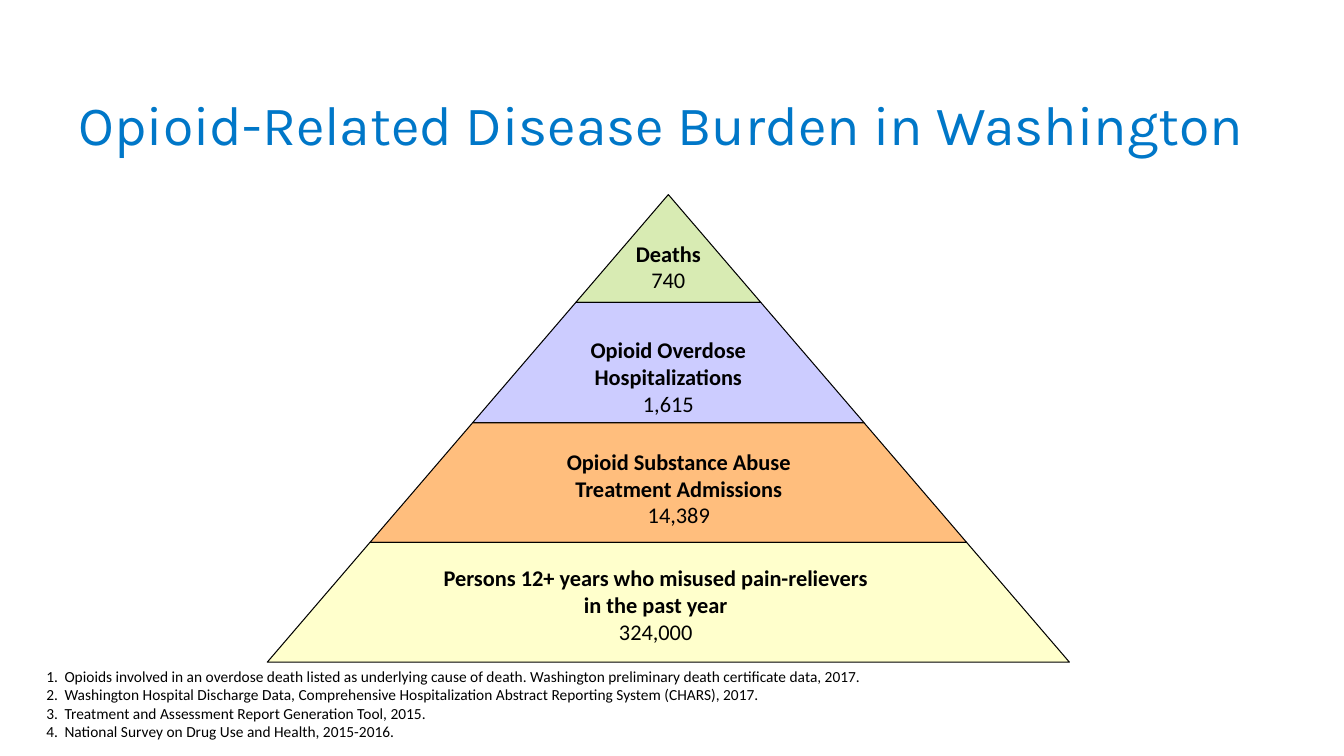
"""Build the opioid disease burden pyramid slide."""
from dataclasses import dataclass

from lxml.etree import SubElement
from pptx import Presentation
from pptx.dml.color import RGBColor
from pptx.enum.text import MSO_ANCHOR as Anchor, PP_ALIGN as Align
from pptx.oxml.ns import qn
from pptx.util import Pt

COLORS = {
    "title": "0077C8", "text": "000000", "outline": "000000", "deaths": "D8EBB3",
    "hospital": "CCCCFF", "treatment": "FFBE7D", "misuse": "FFFFCC",
}
APEX_X, APEX_Y = 477.4, 139
BASE_Y, BASE_HALF = 473, 286.5


@dataclass
class Tier:
    color: str
    top: float
    bottom: float
    labels: list[str]
    count: str
    bottom_inset: float
    left_inset: float = 0
    right_inset: float = 0


TIERS = [
    Tier("deaths", APEX_Y, 216, ["Deaths"], "740", 6.4),
    Tier("hospital", 216, 302, ["Opioid Overdose Hospitalizations"], "1,615", 4, 72, 72),
    Tier("treatment", 302, 387.4, ["Opioid Substance Abuse", "Treatment Admissions"],
         "14,389", 10, left_inset=15),
    Tier("misuse", 387.4, BASE_Y,
         ["Persons 12+ years who misused pain-relievers", "in the past year"],
         "324,000", 12.6, right_inset=18),
]
FOOTNOTES = [
    "Opioids involved in an overdose death listed as underlying cause of death. "
    "Washington preliminary death certificate data, 2017.",
    "Washington Hospital Discharge Data, Comprehensive Hospitalization Abstract "
    "Reporting System (CHARS), 2017.",
    "Treatment and Assessment Report Generation Tool, 2015.",
    "National Survey on Drug Use and Health, 2015-2016.",
]


def rgb(name: str) -> RGBColor:
    return RGBColor.from_string(COLORS[name])


def write(frame, text: str, *, size: float, font: str = "Calibri", color: str = "text",
          bold: bool = False, align=Align.LEFT, spacing: float = 1,
          numbered: bool = False) -> None:
    paragraph = frame.paragraphs[0]
    if paragraph.runs:
        paragraph = frame.add_paragraph()
    paragraph.alignment = align
    paragraph.line_spacing = spacing
    if numbered:
        properties = paragraph._p.get_or_add_pPr()
        properties.set("marL", str(Pt(13)))
        properties.set("indent", str(Pt(-13)))
        SubElement(properties, qn("a:buFont"), typeface="+mj-lt")
        SubElement(properties, qn("a:buAutoNum"), type="arabicPeriod")
    run = paragraph.add_run()
    run.text = text
    run.font.name = font
    run.font.size = Pt(size)
    run.font.bold = bold
    run.font.color.rgb = rgb(color)


def add_frame(slide, left: float, top: float, width: float, height: float):
    frame = slide.shapes.add_textbox(Pt(left), Pt(top), Pt(width), Pt(height)).text_frame
    frame.word_wrap = True
    return frame


def edges(y: float) -> list[tuple[int, int]]:
    half = BASE_HALF * (y - APEX_Y) / (BASE_Y - APEX_Y)
    return [(Pt(APEX_X - half), Pt(y)), (Pt(APEX_X + half), Pt(y))]


def draw_tier(slide, tier: Tier) -> None:
    corners = list(dict.fromkeys(edges(tier.top) + edges(tier.bottom)[::-1]))
    builder = slide.shapes.build_freeform(*corners[0])
    builder.add_line_segments(corners[1:], close=True)
    level = builder.convert_to_shape()
    level.shadow.inherit = False
    level.fill.solid()
    level.fill.fore_color.rgb = rgb(tier.color)
    level.line.color.rgb = rgb("outline")
    level.line.width = Pt(0.75)
    frame = level.text_frame
    frame.word_wrap = True
    frame.vertical_anchor = Anchor.BOTTOM
    frame.margin_left, frame.margin_right = Pt(tier.left_inset), Pt(tier.right_inset)
    frame.margin_top, frame.margin_bottom = 0, Pt(tier.bottom_inset)
    for label in tier.labels:
        write(frame, label, size=16, bold=True, align=Align.CENTER)
    write(frame, tier.count, size=16, align=Align.CENTER)


def main() -> None:
    deck = Presentation()
    deck.slide_width, deck.slide_height = Pt(960), Pt(540)
    slide = deck.slides.add_slide(deck.slide_layouts[6])
    heading = add_frame(slide, 49, 49.7, 857.5, 83.5)
    heading.vertical_anchor = Anchor.MIDDLE
    write(heading, "Opioid-Related Disease Burden in Washington", size=39.6,
          font="Karla", color="title", spacing=0.9)
    for tier in TIERS:
        draw_tier(slide, tier)
    notes = add_frame(slide, 26, 473, 752, 60.5)
    for footnote in FOOTNOTES:
        write(notes, footnote, size=11, numbered=True)
    deck.save("out.pptx")


if __name__ == "__main__":
    main()
